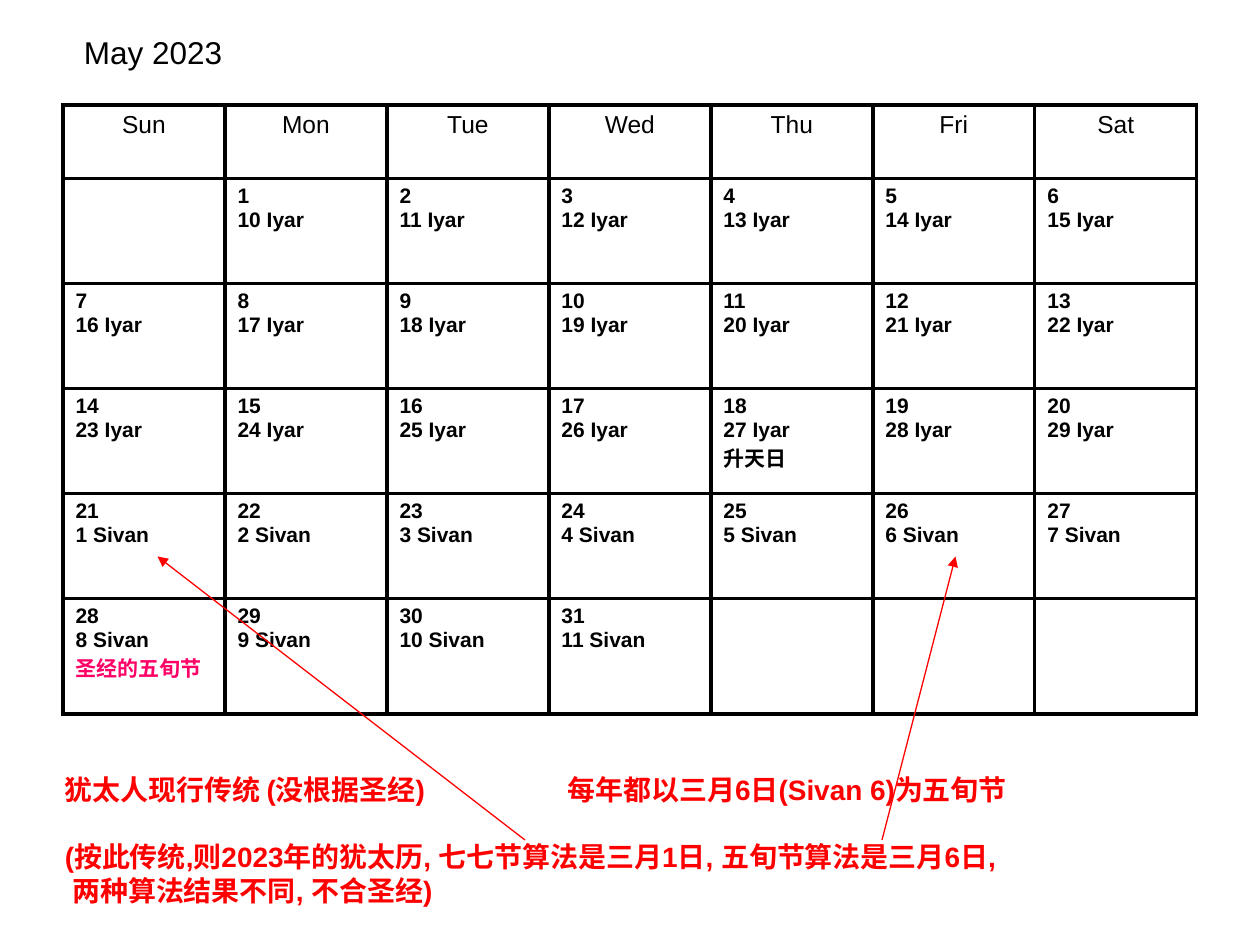
from dataclasses import dataclass

from pptx import Presentation
from pptx.dml.color import RGBColor
from pptx.enum.shapes import MSO_CONNECTOR
from pptx.enum.text import MSO_ANCHOR, MSO_AUTO_SIZE, PP_ALIGN
from pptx.oxml.ns import qn
from pptx.util import Inches, Pt
from lxml.etree import SubElement, fromstring, tostring

BLACK, RED, PINK = "000000", "FF0000", "FF0066"
LATIN, CHINESE = "Arial", "Noto Sans CJK SC"
WEEKDAYS = ("Sun", "Mon", "Tue", "Wed", "Thu", "Fri", "Sat")
MONTH_DAYS, FIRST_COLUMN, LAST_IYAR_DAY = 31, 1, 20
FEASTS = {18: ("升天日", BLACK), 28: ("圣经的五旬节", PINK)}
WEEK_HEIGHTS = (7, 10, 10, 10, 10, 11)
HANGING = Inches(0.38)


@dataclass
class Arrow:
    start: tuple[int, int]
    end: tuple[int, int]


@dataclass
class NoteLine:
    text: str
    gap: int = 0
    indent: float = 0


ARROWS = (Arrow((50, 80), (15, 53)), Arrow((84, 80), (91, 53)))
NOTES = (
    NoteLine("犹太人现行传统 (没根据圣经)\t每年都以三月6日(Sivan 6)为五旬节"),
    NoteLine("(按此传统,则2023年的犹太历, 七七节算法是三月1日, 五旬节算法是三月6日,", gap=19),
    NoteLine("两种算法结果不同, 不合圣经)", indent=0.06),
)


def grid(*units: float) -> list[int]:
    """Lengths on a grid of 120 columns by 90 rows, a twelfth of an inch each."""
    return [Inches(unit / 12) for unit in units]


def colour(hex_value: str) -> RGBColor:
    return RGBColor.from_string(hex_value)


def write(paragraph, text: str, size: float, hex_value: str = BLACK, bold: bool = False) -> None:
    run = paragraph.add_run()
    run.text = text
    for name, value in {"name": LATIN, "size": Pt(size), "bold": bold}.items():
        setattr(run.font, name, value)
    run.font.color.rgb = colour(hex_value)
    SubElement(run.font._element, qn("a:ea"), typeface=CHINESE)


def format_frame(frame, wrap: bool) -> None:
    settings = {"word_wrap": wrap, "auto_size": MSO_AUTO_SIZE.NONE,
                "vertical_anchor": MSO_ANCHOR.TOP}
    for name, value in settings.items():
        setattr(frame, name, value)


def place(shape, *box: float) -> None:
    for name, value in zip(("left", "top", "width", "height"), grid(*box)):
        setattr(shape, name, value)


def format_cell(cell) -> None:
    cell.fill.background()
    properties = cell._tc.get_or_add_tcPr()
    for position, side in enumerate(("lnL", "lnR", "lnT", "lnB")):
        border = SubElement(properties, qn(f"a:{side}"), w=str(Pt(2.25)))
        SubElement(SubElement(border, qn("a:solidFill")), qn("a:srgbClr"), val=BLACK)
        properties.insert(position, border)


def write_cell(cell, lines: list[tuple[str, str]], size: float, bold: bool, align) -> None:
    for index, (text, hex_value) in enumerate(lines):
        frame = cell.text_frame
        paragraph = frame.add_paragraph() if index else frame.paragraphs[0]
        paragraph.alignment = align
        properties = paragraph._p.get_or_add_pPr()
        properties.set("marL", str(HANGING))
        properties.set("indent", str(-HANGING))
        write(paragraph, text, size, hex_value, bold)


def hebrew_date(day: int) -> str:
    if day <= LAST_IYAR_DAY:
        return f"{day + 9} Iyar"
    return f"{day - LAST_IYAR_DAY} Sivan"


def draw_calendar(slide) -> None:
    columns = len(WEEKDAYS)
    calendar = slide.shapes.add_table(
        len(WEEK_HEIGHTS), columns, *grid(6, 10, 108, sum(WEEK_HEIGHTS))).table
    calendar.first_row = calendar.horz_banding = False
    for row, height in zip(calendar.rows, grid(*WEEK_HEIGHTS)):
        row.height = height
    for cell in calendar.iter_cells():
        format_cell(cell)
    for column, weekday in enumerate(WEEKDAYS):
        write_cell(calendar.cell(0, column), [(weekday, BLACK)], 14, False, PP_ALIGN.CENTER)
    for day in range(1, MONTH_DAYS + 1):
        week, column = divmod(day - 1 + FIRST_COLUMN, columns)
        lines = [(str(day), BLACK), (hebrew_date(day), BLACK)]
        if day in FEASTS:
            lines.append(FEASTS[day])
        write_cell(calendar.cell(week + 1, column), lines, 12, True, PP_ALIGN.LEFT)


def draw_notes(slide) -> None:
    frame = slide.shapes.add_textbox(*grid(5, 73, 109, 14)).text_frame
    format_frame(frame, wrap=True)
    for index, note in enumerate(NOTES):
        paragraph = frame.add_paragraph() if index else frame.paragraphs[0]
        properties = paragraph._p.get_or_add_pPr()
        properties.set("marL", str(Inches(note.indent)))
        if "\t" in note.text:
            stops = SubElement(properties, qn("a:tabLst"))
            SubElement(stops, qn("a:tab"), pos=str(Inches(3.99)), algn="l")
        if note.gap:
            paragraph.space_before = Pt(note.gap)
        write(paragraph, note.text, 16, RED, True)


def draw_arrow(slide, arrow: Arrow) -> None:
    connector = slide.shapes.add_connector(
        MSO_CONNECTOR.STRAIGHT, *grid(*arrow.start, *arrow.end))
    connector.line.color.rgb = colour(RED)
    connector.line.width = Pt(0.75)
    SubElement(connector.line._get_or_add_ln(), qn("a:tailEnd"), type="triangle")
    SubElement(connector._element.spPr, qn("a:effectLst"))


def main() -> None:
    presentation = Presentation()
    presentation.slide_width, presentation.slide_height = grid(120, 90)
    slide = presentation.slides.add_slide(presentation.slide_layouts[5])
    month = slide.shapes.title
    place(month, 6.8, 2.5, 15.6, 4.8)
    format_frame(month.text_frame, wrap=False)
    month.text_frame.paragraphs[0].alignment = PP_ALIGN.LEFT
    write(month.text_frame.paragraphs[0], "May 2023", 18)
    draw_calendar(slide)
    draw_notes(slide)
    for arrow in ARROWS:
        draw_arrow(slide, arrow)
    presentation.save("out.pptx")


if __name__ == "__main__":
    main()
